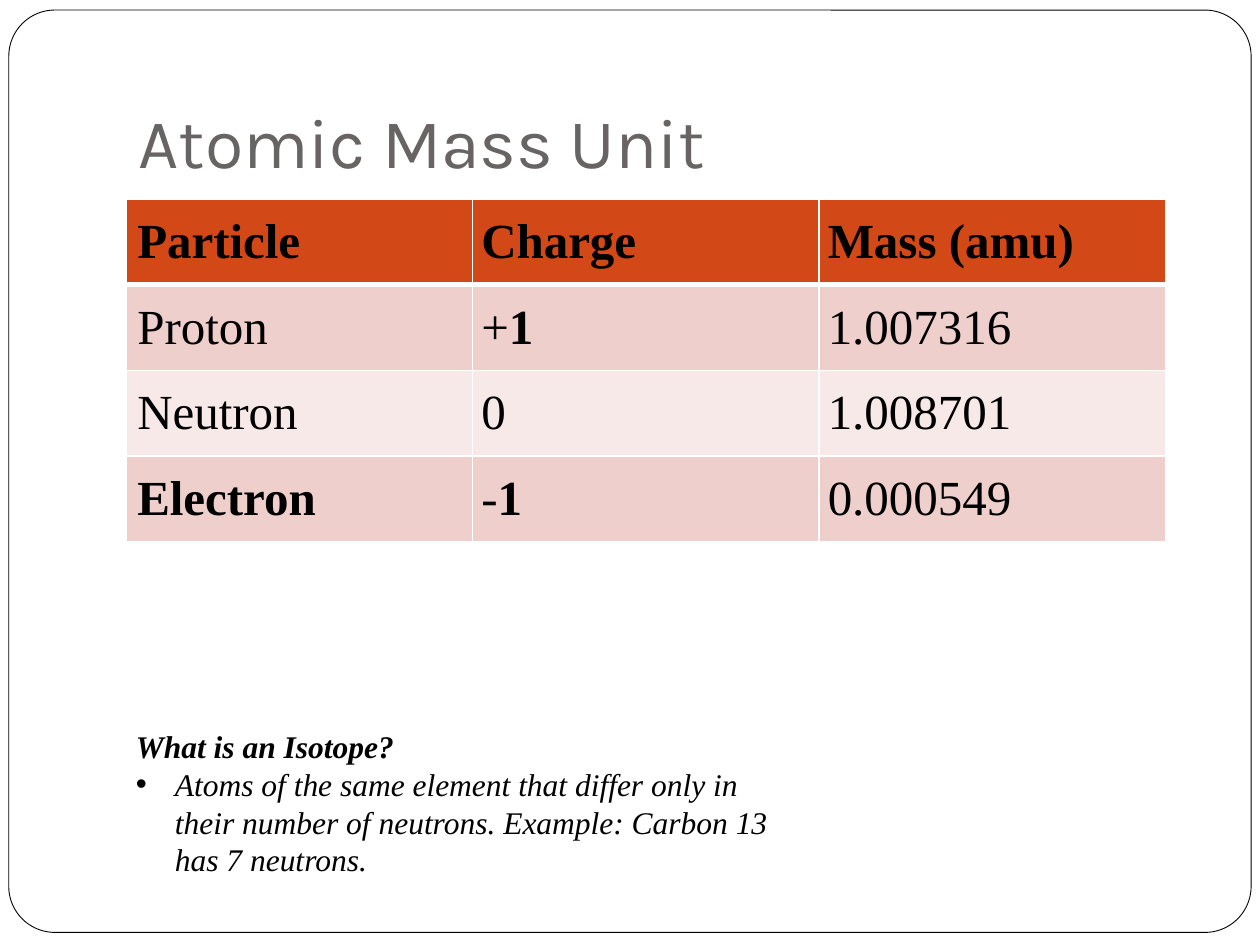
from dataclasses import dataclass

from lxml.etree import SubElement
from pptx import Presentation
from pptx.dml.color import RGBColor
from pptx.enum.shapes import MSO_SHAPE
from pptx.enum.text import MSO_ANCHOR, MSO_AUTO_SIZE, PP_ALIGN
from pptx.oxml.ns import qn
from pptx.slide import Slide
from pptx.table import _Cell
from pptx.text.text import Font
from pptx.util import Inches, Pt

SERIF = "Times New Roman"
BLACK = "000000"
WHITE = "FFFFFF"


@dataclass(frozen=True)
class Span:
    text: str
    bold: bool = False


@dataclass(frozen=True)
class ParticleRow:
    fill: str
    entries: tuple[tuple[Span, ...], ...]


ROWS = (
    ParticleRow("D34817", ((Span("Particle", True),), (Span("Charge", True),),
                           (Span("Mass (amu)", True),))),
    ParticleRow("EFCFCC", ((Span("Proton"),), (Span("+"), Span("1", True)),
                           (Span("1.007316"),))),
    ParticleRow("F7E9E8", ((Span("Neutron"),), (Span("0"),), (Span("1.008701"),))),
    ParticleRow("EFCFCC", ((Span("Electron", True),), (Span("-"), Span("1", True)),
                           (Span("0.000549"),))),
)


def color(value: str) -> RGBColor:
    return RGBColor.from_string(value)


def style_font(font: Font, name: str, size: float, ink: str) -> None:
    font.name = name
    font.size = Pt(size)
    font.color.rgb = color(ink)


def add_frame(slide: Slide) -> None:
    frame = slide.shapes.add_shape(MSO_SHAPE.ROUNDED_RECTANGLE, Inches(0.07),
                                   Inches(0.08), Inches(9.86), Inches(7.32))
    frame.adjustments[0] = 0.05
    frame.shadow.inherit = False
    frame.fill.solid()
    frame.fill.fore_color.rgb = color(WHITE)
    frame.line.color.rgb = color(BLACK)
    frame.line.width = Pt(0.5)
    slide.shapes.title.element.addprevious(frame.element)


def format_title(slide: Slide) -> None:
    title = slide.shapes.title
    title.left, title.top = Inches(1), Inches(0.3)
    title.width, title.height = Inches(8.5), Inches(1.25)
    body = title.text_frame
    body.text = "Atomic Mass Unit"
    body.vertical_anchor = MSO_ANCHOR.BOTTOM
    body.margin_bottom = Inches(0.1)
    heading = body.paragraphs[0]
    heading.alignment = PP_ALIGN.LEFT
    style_font(heading.font, "Karla", 40, "696464")


def set_borders(cell: _Cell, top: float, bottom: float) -> None:
    properties = cell._tc.get_or_add_tcPr()
    for edge, width in (("lnL", 1), ("lnR", 1), ("lnT", top), ("lnB", bottom)):
        border = SubElement(properties, qn(f"a:{edge}"), w=str(Pt(width)))
        fill = SubElement(border, qn("a:solidFill"))
        SubElement(fill, qn("a:srgbClr"), val=WHITE)


def fill_cell(cell: _Cell, spans: tuple[Span, ...], fill: str, left: float) -> None:
    cell.fill.solid()
    cell.fill.fore_color.rgb = color(fill)
    cell.vertical_anchor = MSO_ANCHOR.MIDDLE
    cell.margin_left, cell.margin_right = Inches(left), Inches(0.07)
    entry = cell.text_frame.paragraphs[0]
    style_font(entry.font, SERIF, 28, BLACK)
    for span in spans:
        run = entry.add_run()
        run.text = span.text
        style_font(run.font, SERIF, 28, BLACK)
        run.font.bold = span.bold


def add_particle_table(slide: Slide) -> None:
    particles = slide.shapes.add_table(len(ROWS), 3, Inches(1), Inches(1.58),
                                       Inches(8.25), Inches(2.72)).table
    for r, row in enumerate(ROWS):
        for c, spans in enumerate(row.entries):
            cell = particles.cell(r, c)
            set_borders(cell, top=3 if r == 1 else 1, bottom=3 if r == 0 else 1)
            fill_cell(cell, spans, row.fill, left=0.09 if c == 0 else 0.07)


def add_isotope_note(slide: Slide) -> None:
    note = slide.shapes.add_textbox(Inches(0.98), Inches(5.72),
                                    Inches(5.35), Inches(1.01)).text_frame
    note.word_wrap = True
    note.auto_size = MSO_AUTO_SIZE.SHAPE_TO_FIT_TEXT
    question = note.paragraphs[0]
    question.text = "What is an Isotope?"
    answer = note.add_paragraph()
    answer.text = ("Atoms of the same element that differ only in their number "
                   "of neutrons. Example: Carbon 13 has 7 neutrons.")
    for paragraph in (question, answer):
        style_font(paragraph.font, SERIF, 18, BLACK)
        paragraph.font.italic = True
        paragraph.font.bold = paragraph is question
    properties = answer._p.get_or_add_pPr()
    properties.set("marL", str(Inches(0.31)))
    properties.set("indent", str(-Inches(0.31)))
    bullet_font = SubElement(properties, qn("a:buFont"), typeface="Arial")
    bullet = SubElement(properties, qn("a:buChar"), char="•")
    properties.find(qn("a:defRPr")).addprevious(bullet_font)
    bullet_font.addnext(bullet)


def main() -> None:
    """Build the atomic mass unit slide."""
    deck = Presentation()
    deck.slide_width, deck.slide_height = Inches(10), Inches(7.5)
    slide = deck.slides.add_slide(deck.slide_layouts[5])
    add_frame(slide)
    format_title(slide)
    add_particle_table(slide)
    add_isotope_note(slide)
    deck.save("out.pptx")


if __name__ == "__main__":
    main()
